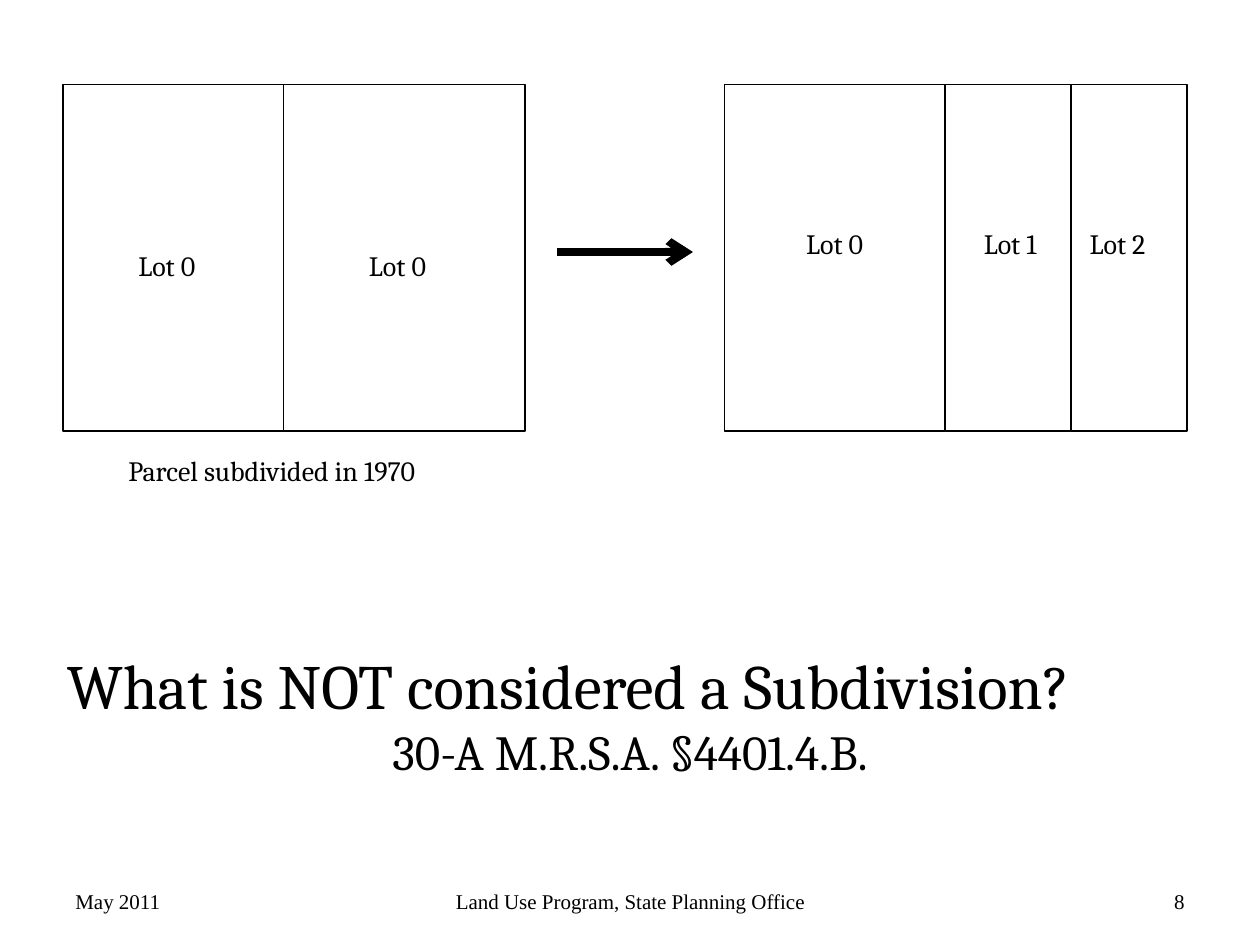
from pptx import Presentation, util as u
from pptx.dml.color import RGBColor
from pptx.enum import shapes, text
from pptx.oxml.ns import qn
from lxml import etree

Inches = u.Inches
LEFT, CENTER, RIGHT = (text.PP_ALIGN.LEFT, text.PP_ALIGN.CENTER,
                       text.PP_ALIGN.RIGHT)
TOP, MIDDLE = text.MSO_ANCHOR.TOP, text.MSO_ANCHOR.MIDDLE
THEME = {
    "ink": RGBColor(0, 0, 0),
    "paper": RGBColor(255, 255, 255),
    "outline": u.Pt(1),
    "arrow": u.Pt(4.5),
    "heading": {"name": "Cambria", "size": u.Pt(36)},
    "citation": {"name": "Cambria", "size": u.Pt(28)},
    "label": {"name": "Cambria", "size": u.Pt(16)},
    "footer": {"name": "Times New Roman", "size": u.Pt(12)},
}


def write(box, lines, wrap=True, anchor=TOP):
    """Fill a box with (words, style, alignment) paragraphs."""
    frame = box.text_frame
    settings = {"auto_size": text.MSO_AUTO_SIZE.NONE, "word_wrap": wrap,
                "vertical_anchor": anchor}
    for name, value in settings.items():
        setattr(frame, name, value)
    for index, (words, style, alignment) in enumerate(lines):
        para = frame.add_paragraph() if index else frame.paragraphs[0]
        para.alignment = alignment
        span = para.add_run()
        span.text = words
        for name, value in THEME[style].items():
            setattr(span.font, name, value)
        span.font.color.rgb = THEME["ink"]


def draw_line(page, start, end, width):
    line = page.shapes.add_connector(
        shapes.MSO_CONNECTOR.STRAIGHT, *map(Inches, start + end))
    line.line.color.rgb = THEME["ink"]
    line.line.width = width
    etree.SubElement(line._element.spPr, qn("a:effectLst"))
    return line


deck = Presentation()
deck.slide_width, deck.slide_height = Inches(10), Inches(7.5)
page = deck.slides.add_slide(deck.slide_layouts[5])

# Title with the statute citation
title = page.shapes.title
title_place = {"left": 0.43, "top": 5.08, "width": 9.14, "height": 1.18}
for name, value in title_place.items():
    setattr(title, name, Inches(value))
write(title, [("What is NOT considered a Subdivision?", "heading", LEFT),
              ("30-A M.R.S.A. §4401.4.B.", "citation", CENTER)])

# Parcels before and after, each with its inner lot boundaries
parcel_top, parcel_width, parcel_height = 0.67, 3.67, 2.75
for left, boundaries in [(0.5, [2.25]), (5.75, [7.5, 8.5])]:
    parcel = page.shapes.add_shape(
        shapes.MSO_SHAPE.RECTANGLE,
        *map(Inches, (left, parcel_top, parcel_width, parcel_height)))
    parcel.shadow.inherit = False
    parcel.fill.solid()
    parcel.fill.fore_color.rgb = THEME["paper"]
    parcel.line.color.rgb = THEME["ink"]
    parcel.line.width = THEME["outline"]
    for x in boundaries:
        draw_line(page, (x, parcel_top), (x, parcel_top + parcel_height),
                  THEME["outline"])

arrow = draw_line(page, (4.42, 2), (5.5, 2), THEME["arrow"])
etree.SubElement(arrow.line._get_or_add_ln(), qn("a:tailEnd"), type="arrow")

# Lot names and the parcel caption
lots = [("Lot 0", 1, 1.92), ("Lot 0", 2.83, 1.92), ("Lot 0", 6.3, 1.75),
        ("Lot 1", 7.71, 1.75), ("Lot 2", 8.55, 1.75)]
for name, left, top in lots:
    box = page.shapes.add_textbox(*map(Inches, (left, top, 0.7, 0.37)))
    write(box, [(name, "label", LEFT)], wrap=False)

caption = page.shapes.add_textbox(*map(Inches, (0.92, 3.55, 2.83, 0.37)))
write(caption, [("Parcel subdivided in 1970", "label", LEFT)])

# Footer
footers = [("May 2011", 0.5, 2.33, LEFT),
           ("Land Use Program, State Planning Office", 3.42, 3.17, CENTER),
           ("8", 7.17, 2.33, RIGHT)]
for words, left, width, alignment in footers:
    box = page.shapes.add_textbox(*map(Inches, (left, 6.95, width, 0.4)))
    write(box, [(words, "footer", alignment)], anchor=MIDDLE)

deck.save("out.pptx")
